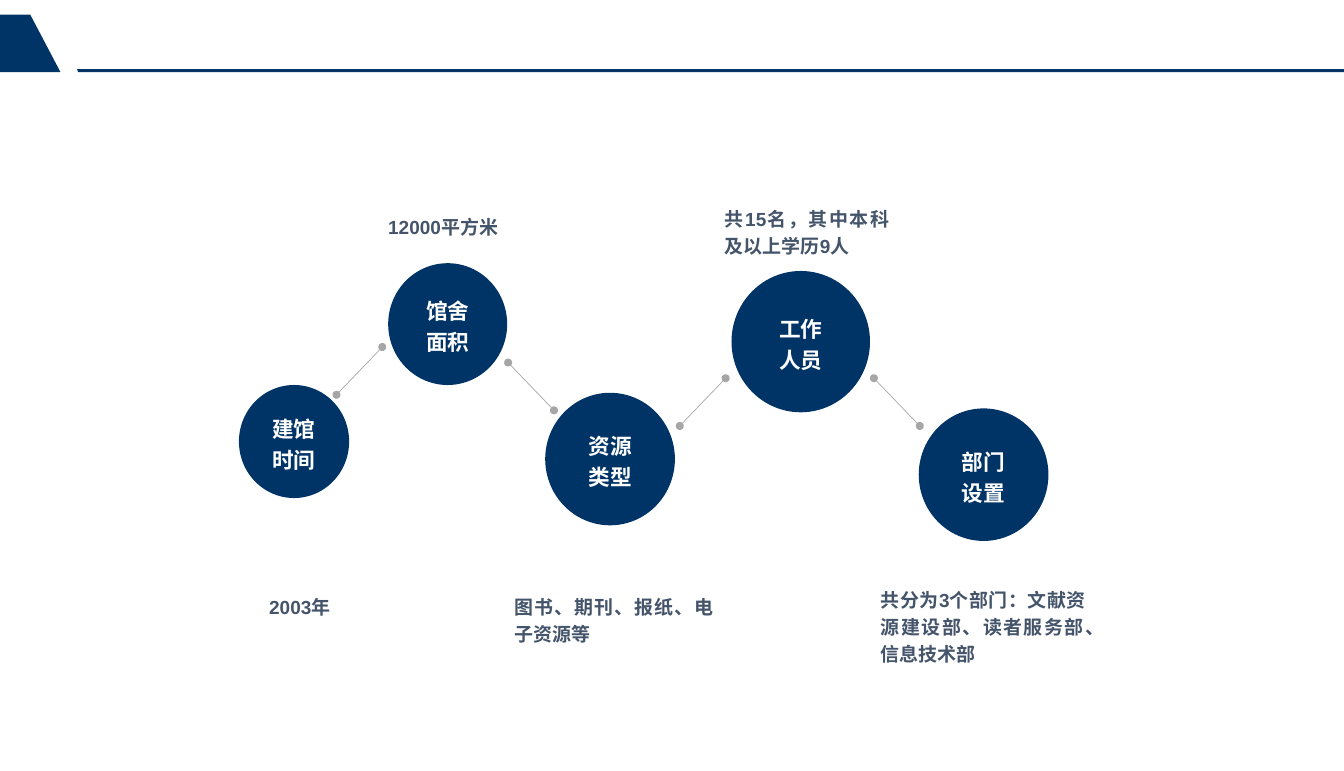
"""Build the library overview slide: five linked circles with captions."""
from dataclasses import dataclass

from lxml import etree
from pptx import Presentation
from pptx.dml.color import RGBColor
from pptx.enum.shapes import MSO_CONNECTOR, MSO_SHAPE
from pptx.enum.text import MSO_ANCHOR, MSO_AUTO_SIZE, PP_ALIGN
from pptx.oxml.ns import qn
from pptx.util import Inches, Pt

OVAL = MSO_SHAPE.OVAL
STRAIGHT = MSO_CONNECTOR.STRAIGHT
MIDDLE = MSO_ANCHOR.MIDDLE
GROW = MSO_AUTO_SIZE.SHAPE_TO_FIT_TEXT
CENTER = PP_ALIGN.CENTER
JUSTIFY = PP_ALIGN.JUSTIFY


@dataclass(frozen=True)
class Theme:
    """Colours, type sizes and spacing of the slide."""
    navy: RGBColor = RGBColor(0x00, 0x33, 0x66)
    white: RGBColor = RGBColor(0xFF, 0xFF, 0xFF)
    slate: RGBColor = RGBColor(0x44, 0x54, 0x6A)
    grey: RGBColor = RGBColor(0xA6, 0xA6, 0xA6)
    font: str = "Arial"
    circle_size: int = 16
    caption_size: int = 14
    spacing: float = 1.2
    link_width: float = 0.5


THEME = Theme()
WIDTH, HEIGHT = 13.78, 7.91

CIRCLES = [
    (("建馆", "时间"), 2.45, 3.95, 1.13, 1.16),
    (("馆舍", "面积"), 3.98, 2.7, 1.22, 1.25),
    (("资源", "类型"), 5.59, 4.03, 1.33, 1.36),
    (("工作", "人员"), 7.5, 2.78, 1.42, 1.45),
    (("部门", "设置"), 9.42, 4.19, 1.33, 1.36),
]
CAPTIONS = [
    ("2003年", 2.76, 6.06, 1.69, 0.28),
    ("12000平方米", 3.98, 2.16, 1.69, 0.28),
    ("图书、期刊、报纸、电子资源等", 5.28, 6.06, 2.04, 0.56),
    ("共15名，其中本科及以上学历9人", 7.43, 2.08, 1.69, 0.58),
    ("共分为3个部门：文献资源建设部、读者服务部、信息技术部", 9.03, 5.99, 2.1, 0.85),
]
LINK_DX, LINK_DY = 0.47, 0.49
LINKS = [
    (3.45, 4.05, -LINK_DY),
    (5.21, 3.72, LINK_DY),
    (6.97, 4.37, -LINK_DY),
    (8.96, 3.88, LINK_DY),
]
HEADER_RULE = [(0.79, 0.71), (WIDTH, 0.71), (WIDTH, 0.74), (0.8, 0.74)]
HEADER_TAB = [(0.31, 0.15), (0.62, 0.74), (0, 0.74), (0, 0.15)]


def paint(sp):
    """Give a shape a plain navy fill."""
    sp.fill.solid()
    sp.fill.fore_color.rgb = THEME.navy
    sp.line.fill.background()
    sp.shadow.inherit = False


def add_lines(tf, lines, size, color, align):
    """Write one bold paragraph per line."""
    for i, text in enumerate(lines):
        p = tf.add_paragraph() if i else tf.paragraphs[0]
        p.alignment = align
        p.line_spacing = THEME.spacing
        r = p.add_run()
        r.text = text
        r.font.name = THEME.font
        r.font.size = Pt(size)
        r.font.bold = True
        r.font.color.rgb = color


def add_circle(s, lines, *box):
    """Add a navy circle with a centred label."""
    sp = s.shapes.add_shape(OVAL, *map(Inches, box))
    paint(sp)
    tf = sp.text_frame
    tf.vertical_anchor = MIDDLE
    add_lines(tf, lines, THEME.circle_size, THEME.white, CENTER)


def add_caption(s, text, *box):
    """Add a justified caption without insets."""
    tf = s.shapes.add_textbox(*map(Inches, box)).text_frame
    tf.word_wrap = True
    tf.auto_size = GROW
    tf.margin_left = tf.margin_top = tf.margin_right = tf.margin_bottom = 0
    add_lines(tf, [text], THEME.caption_size, THEME.slate, JUSTIFY)


def add_link(s, x, y, dy):
    """Add a thin line with a dot at each end."""
    ends = (x, y, x + LINK_DX, y + dy)
    cxn = s.shapes.add_connector(STRAIGHT, *map(Inches, ends))
    cxn.line.color.rgb = THEME.grey
    cxn.line.width = Pt(THEME.link_width)
    ln = cxn.line._get_or_add_ln()
    for tag in ("a:headEnd", "a:tailEnd"):
        etree.SubElement(ln, qn(tag), type="oval")
    etree.SubElement(cxn._element.spPr, qn("a:effectLst"))


def add_outline(s, points):
    """Add a closed navy polygon."""
    start, *rest = [(Inches(x), Inches(y)) for x, y in points]
    builder = s.shapes.build_freeform(*start)
    builder.add_line_segments(rest, close=True)
    paint(builder.convert_to_shape())


def main():
    """Build and save the slide."""
    prs = Presentation()
    prs.slide_width, prs.slide_height = Inches(WIDTH), Inches(HEIGHT)
    s = prs.slides.add_slide(prs.slide_layouts[6])
    for points in (HEADER_RULE, HEADER_TAB):
        add_outline(s, points)
    for circle in CIRCLES:
        add_circle(s, *circle)
    for link in LINKS:
        add_link(s, *link)
    for caption in CAPTIONS:
        add_caption(s, *caption)
    prs.save("out.pptx")


if __name__ == "__main__":
    main()
